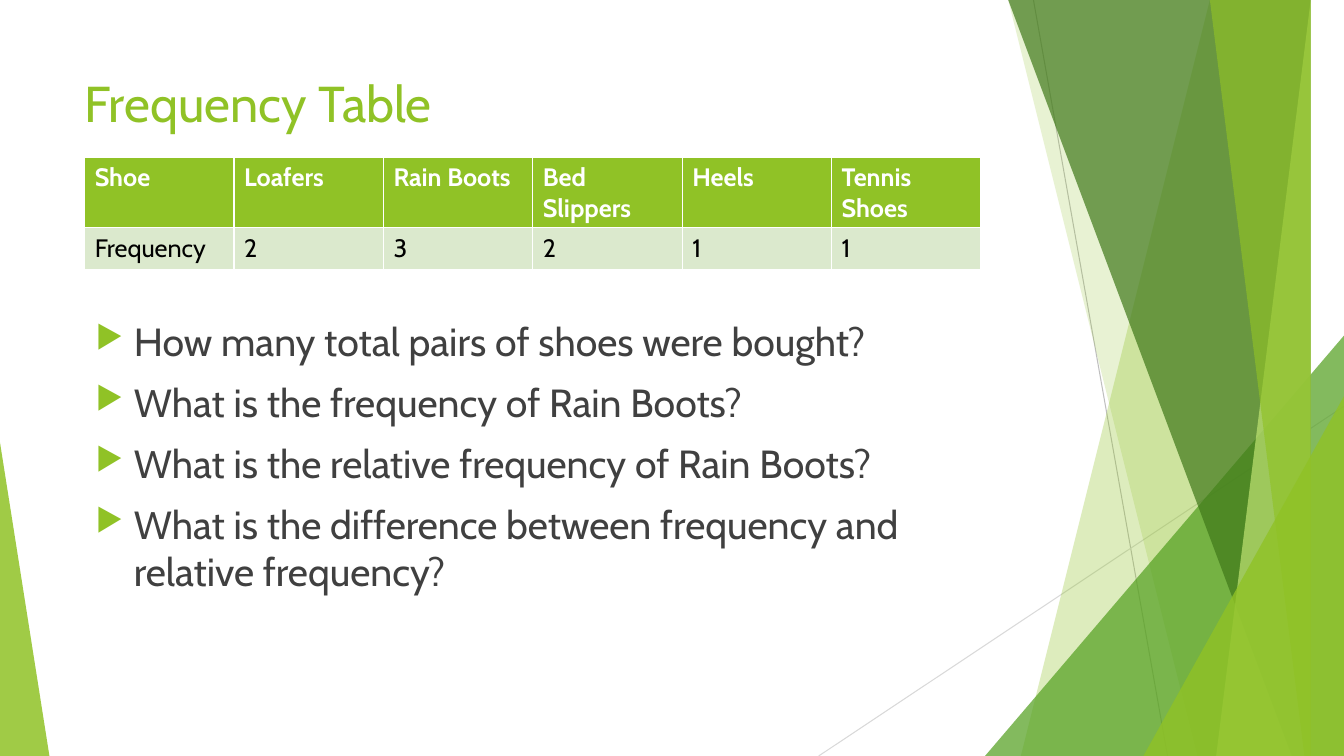
from lxml import etree
from pptx import Presentation, util as u
from pptx.dml.color import RGBColor
from pptx.enum import shapes, text
from pptx.oxml.ns import qn

COLORS = {
    "lime": "90C226", "green": "54A021", "forest": "3F7819", "pale": "C0E474",
    "band": "DBE9CD", "white": "FFFFFF", "black": "000000", "body": "404040",
    "line": "BFBFBF", "faint": "D9D9D9",
}
FONT = "Cabin"
WIDTH, HEIGHT = 13.33, 7.5


def style_runs(paragraph, size, color, bold=False):
    for run in paragraph.runs:
        run.font.name = FONT
        run.font.size = u.Pt(size)
        run.font.bold = bold
        run.font.color.rgb = RGBColor.from_string(COLORS[color])


def paint(facet, color, opacity):
    facet.shadow.inherit = False
    facet.line.fill.background()
    facet.fill.solid()
    facet.fill.fore_color.rgb = RGBColor.from_string(COLORS[color])
    tint = facet.fill._xPr.find(qn("a:solidFill"))[0]
    etree.SubElement(tint, qn("a:alpha")).set("val", str(opacity * 1000))


deck = Presentation()
deck.slide_width, deck.slide_height = u.Inches(WIDTH), u.Inches(HEIGHT)
slide = deck.slides.add_slide(deck.slide_layouts[5])

for x1, y1, x2, color in [(10.25, 0, 11.58, "line"), (WIDTH, 4.03, 8.12, "faint")]:
    ray = slide.shapes.add_connector(
        shapes.MSO_CONNECTOR.STRAIGHT,
        u.Inches(x1), u.Inches(y1), u.Inches(x2), u.Inches(HEIGHT))
    ray.line.width = u.Pt(0.75)
    ray.line.color.rgb = RGBColor.from_string(COLORS[color])
    etree.SubElement(ray._element.spPr, qn("a:effectLst"))

facets = [
    ("blade", 12.28, 10.04, "lime", 30),
    ("blade", 10.5, 11.83, "lime", 20),
    ("triangle", 9.77, 3.33, 3.56, 1, "green", 72),
    ("blade", 10.21, 12.91, "forest", 70),
    ("blade", 13.03, 11.92, "pale", 70),
    ("blade", 11.96, 13.18, "lime", 65),
    ("triangle", 11.34, 3.93, 1.99, 1, "lime", 80),
    ("triangle", 0, 4.39, 0.49, 0, "lime", 85),
]
for outline, *place, color, opacity in facets:
    if outline == "blade":
        top_x, bottom_x = place
        builder = slide.shapes.build_freeform(top_x, -0.01, scale=u.Inches(1))
        builder.add_line_segments(
            [(WIDTH, -0.01), (WIDTH, HEIGHT), (bottom_x, HEIGHT)], close=True)
        facet = builder.convert_to_shape()
    else:
        left, top, width, apex = place
        facet = slide.shapes.add_shape(
            shapes.MSO_SHAPE.ISOSCELES_TRIANGLE,
            u.Inches(left), u.Inches(top), u.Inches(width), u.Inches(HEIGHT - top))
        facet.adjustments[0] = apex
    paint(facet, color, opacity)

title = slide.shapes.title
title.left, title.top = u.Inches(0.74), u.Inches(0.67)
title.width, title.height = u.Inches(9.4), u.Inches(1.44)
title.text_frame.text = "Frequency Table"
title.text_frame.auto_size = text.MSO_AUTO_SIZE.NONE
title.text_frame.vertical_anchor = text.MSO_ANCHOR.TOP
title.text_frame.paragraphs[0].alignment = text.PP_ALIGN.LEFT
style_runs(title.text_frame.paragraphs[0], 36, "lime")

questions = [
    "How many total pairs of shoes were bought?",
    "What is the frequency of Rain Boots?",
    "What is the relative frequency of Rain Boots?",
    "What is the difference between frequency and relative frequency?",
]
body = slide.shapes.add_textbox(
    u.Inches(0.85), u.Inches(3.1), u.Inches(9.4), u.Inches(4.24)).text_frame
body.word_wrap = True
body.text = "\n".join(questions)
for question in body.paragraphs:
    question.space_before = u.Pt(10)
    style_runs(question, 28, "body")
    props = question._p.get_or_add_pPr()
    props.set("marL", str(u.Inches(0.38)))
    props.set("indent", str(-u.Inches(0.38)))
    bullet_color = etree.SubElement(props, qn("a:buClr"))
    etree.SubElement(bullet_color, qn("a:srgbClr")).set("val", COLORS["lime"])
    etree.SubElement(props, qn("a:buSzPct")).set("val", "80000")
    etree.SubElement(props, qn("a:buChar")).set("char", "▶")

purchases = [
    ["Shoe", "Loafers", "Rain Boots", "Bed Slippers", "Heels", "Tennis Shoes"],
    ["Frequency", "2", "3", "2", "1", "1"],
]
table = slide.shapes.add_table(
    2, 6, u.Inches(0.84), u.Inches(1.56), u.Inches(8.89), u.Inches(1.11)).table
row_styles = [(0.7, "lime", "white", True), (0.41, "band", "black", False)]
for row, values, (height, fill, color, bold) in zip(table.rows, purchases, row_styles):
    row.height = u.Inches(height)
    for cell, value in zip(row.cells, values):
        cell.text_frame.text = value
        cell.fill.solid()
        cell.fill.fore_color.rgb = RGBColor.from_string(COLORS[fill])
        style_runs(cell.text_frame.paragraphs[0], 18, color, bold)

deck.save("out.pptx")
